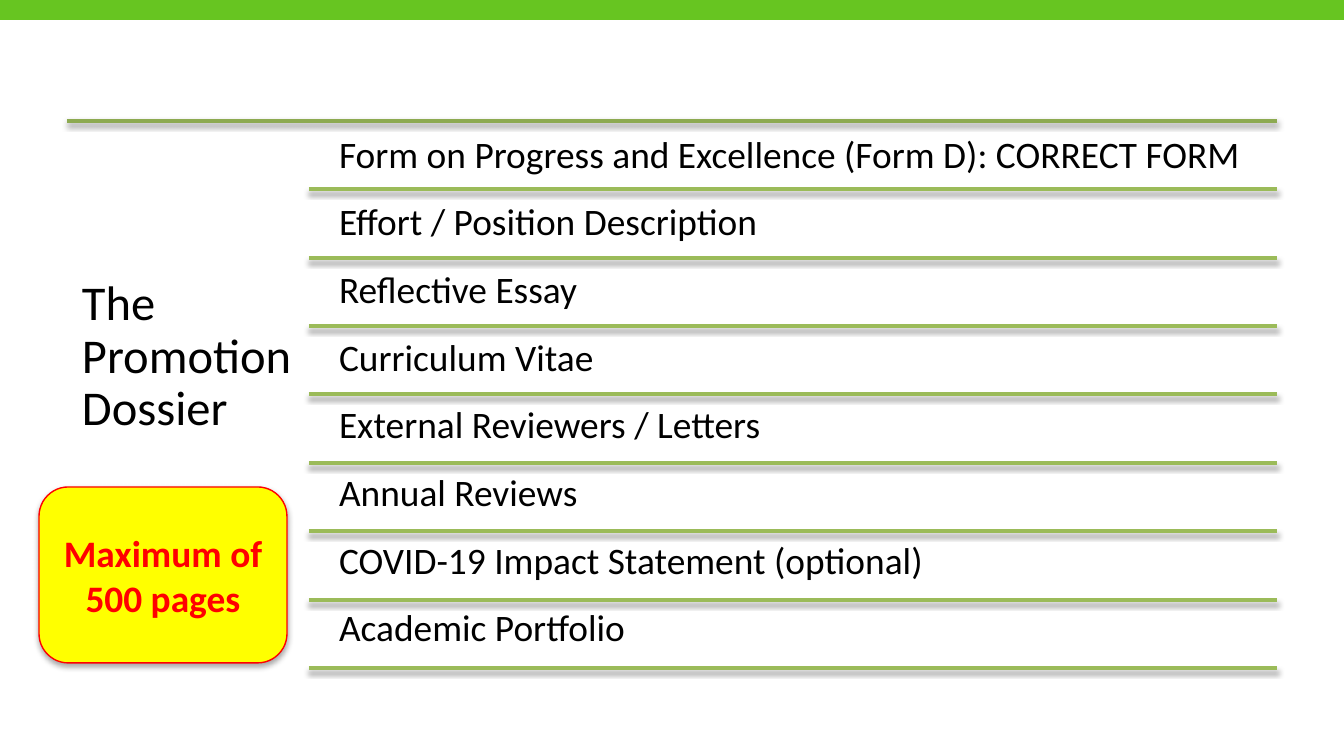
from dataclasses import dataclass

import pptx
import pptx.dml.color
import pptx.enum.shapes
import pptx.enum.text
import pptx.oxml.ns
import pptx.util
from lxml import etree

PAGE_WIDTH, PAGE_HEIGHT = 1344, 756
EMU_PER_PX = 9144000 / PAGE_WIDTH
FONT = "Calibri"
COLOURS = {
    "bar": "67C521",
    "top_rule": "8DAA51",
    "rule": "9BBB59",
    "text": "000000",
    "badge": "FFFF00",
    "alert": "FF0000",
    "shadow": "000000",
}

RULE_LEFT, ROW_LEFT, RULE_RIGHT = 67, 309, 1277
FIRST_RULE, LAST_RULE = 121, 668
ITEMS = [
    "Form on Progress and Excellence (Form D): CORRECT FORM",
    "Effort / Position Description",
    "Reflective Essay",
    "Curriculum Vitae",
    "External Reviewers / Letters",
    "Annual Reviews",
    "COVID-19 Impact Statement (optional)",
    "Academic Portfolio",
]

ALIGN = pptx.enum.text.PP_ALIGN
ANCHOR = pptx.enum.text.MSO_ANCHOR
SHAPE = pptx.enum.shapes.MSO_SHAPE


@dataclass
class Area:
    left: int
    top: int
    width: int
    height: int


@dataclass
class Rule:
    left: int
    y: int
    colour: str


def px(length: float) -> int:
    return round(length * EMU_PER_PX)


def rgb(name: str) -> pptx.dml.color.RGBColor:
    return pptx.dml.color.RGBColor.from_string(COLOURS[name])


def place(box, area: Area) -> None:
    box.left, box.top = px(area.left), px(area.top)
    box.width, box.height = px(area.width), px(area.height)


def add_shadow(box, opacity: int, distance: float) -> None:
    """Give a shape or line a soft shadow straight below it."""
    name = pptx.oxml.ns.qn
    effects = etree.SubElement(box._element.spPr, name("a:effectLst"))
    shadow = etree.SubElement(
        effects, name("a:outerShdw"), blurRad=str(pptx.util.Pt(3.1)),
        dist=str(pptx.util.Pt(distance)), dir="5400000", rotWithShape="0")
    colour = etree.SubElement(shadow, name("a:srgbClr"), val=COLOURS["shadow"])
    etree.SubElement(colour, name("a:alpha"), val=str(opacity * 1000))


def write(box, lines: list[str], *, size: int, colour: str = "text",
          bold: bool = False, align=ALIGN.LEFT, anchor=ANCHOR.TOP,
          inset: int = 13, spacing: float = 1.0, after: float = 0) -> None:
    frame = box.text_frame
    frame.text = "\n".join(lines)
    frame.word_wrap = True
    frame.auto_size = pptx.enum.text.MSO_AUTO_SIZE.NONE
    frame.vertical_anchor = anchor
    frame.margin_left = frame.margin_right = px(inset)
    frame.margin_top = frame.margin_bottom = px(inset)
    for para in frame.paragraphs:
        properties = para._p.get_or_add_pPr()
        properties.set("marL", "0")
        properties.set("indent", "0")
        etree.SubElement(properties, pptx.oxml.ns.qn("a:buNone"))
        para.alignment = align
        para.line_spacing = spacing
        para.space_before = pptx.util.Pt(0)
        para.space_after = pptx.util.Pt(after)
        for span in para.runs:
            span.font.name = FONT
            span.font.size = pptx.util.Pt(size)
            span.font.bold = bold
            span.font.color.rgb = rgb(colour)


def add_box(page, kind, area: Area, fill: str):
    box = page.shapes.add_shape(kind, 0, 0, 0, 0)
    place(box, area)
    box.fill.solid()
    box.fill.fore_color.rgb = rgb(fill)
    return box


def add_rule(page, rule: Rule) -> None:
    line = page.shapes.add_connector(
        pptx.enum.shapes.MSO_CONNECTOR.STRAIGHT,
        px(rule.left), px(rule.y), px(RULE_RIGHT), px(rule.y))
    line.line.color.rgb = rgb(rule.colour)
    line.line.width = pptx.util.Pt(2)
    add_shadow(line, 38, 1.6)


def main() -> None:
    deck = pptx.Presentation()
    deck.slide_width, deck.slide_height = px(PAGE_WIDTH), px(PAGE_HEIGHT)
    page = deck.slides.add_slide(deck.slide_layouts[1])

    bar = add_box(page, SHAPE.RECTANGLE, Area(0, 0, PAGE_WIDTH, 20), "bar")
    bar.line.fill.background()
    bar.shadow.inherit = False

    title = page.shapes.title
    place(title, Area(RULE_LEFT, 264, ROW_LEFT - RULE_LEFT, 190))
    write(title, ["The Promotion Dossier"], size=26, inset=15, spacing=0.9)

    items = page.placeholders[1]
    place(items, Area(328, 125, 950, LAST_RULE - FIRST_RULE))
    # A 20 pt line and the space after it fill one row between rules.
    write(items, ITEMS, size=20, inset=11, spacing=0.9, after=14.65)

    add_rule(page, Rule(RULE_LEFT, FIRST_RULE, "top_rule"))
    pitch = (LAST_RULE - FIRST_RULE) / len(ITEMS)
    for row in range(1, len(ITEMS) + 1):
        add_rule(page, Rule(ROW_LEFT, round(FIRST_RULE + row * pitch), "rule"))

    badge = add_box(page, SHAPE.ROUNDED_RECTANGLE, Area(39, 487, 248, 176), "badge")
    badge.line.color.rgb = rgb("alert")
    badge.line.width = pptx.util.Pt(0.75)
    add_shadow(badge, 35, 1.8)
    write(badge, ["Maximum of 500 pages"], size=20, colour="alert", bold=True,
          align=ALIGN.CENTER, anchor=ANCHOR.MIDDLE)

    deck.save("out.pptx")


if __name__ == "__main__":
    main()
